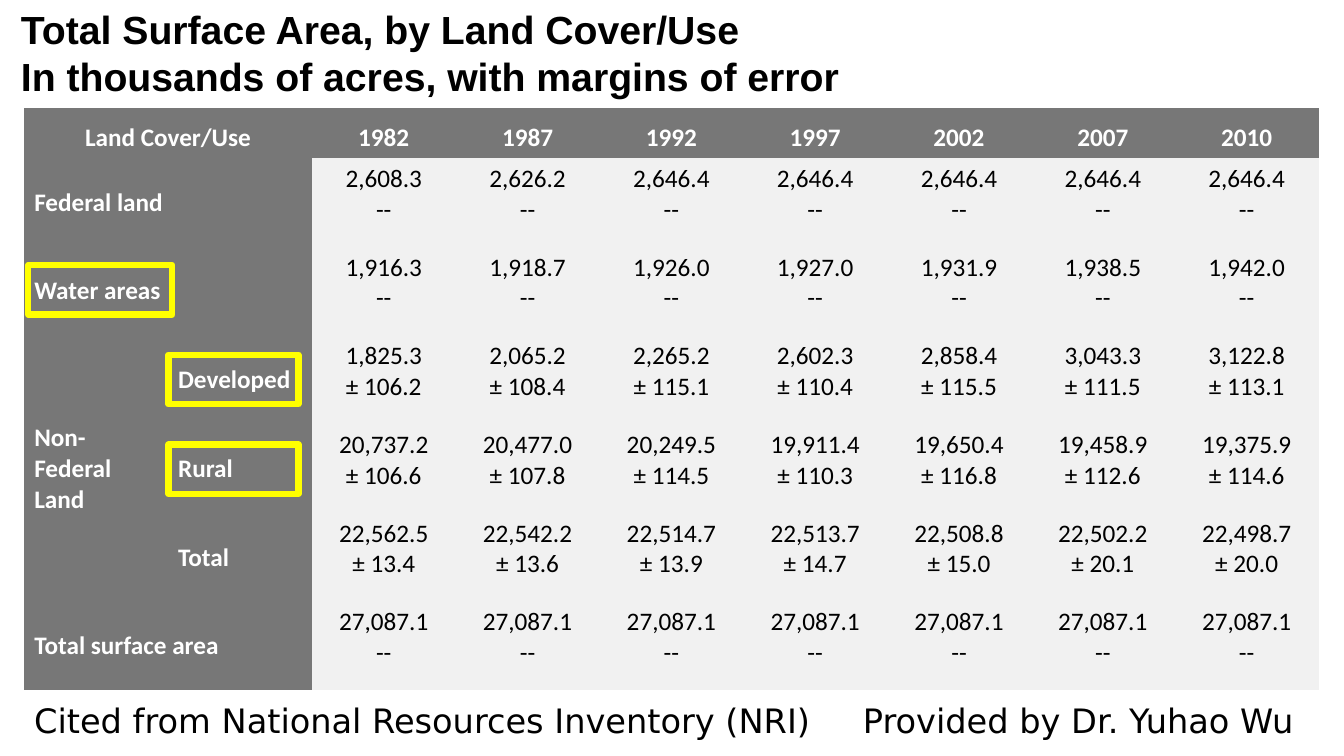
from pptx import Presentation
from pptx.dml.color import RGBColor
from pptx.enum.shapes import MSO_SHAPE as Shape
from pptx.enum.text import MSO_ANCHOR as Anchor, PP_ALIGN as Align
from pptx.oxml.ns import qn
from pptx.util import Inches, Pt
from lxml.etree import SubElement

COLORS = {
    "ink": "000000",
    "header": "777777",
    "header text": "FFFFFF",
    "value": "F1F1F1",
    "highlight": "FFFF00",
}
PLAIN_TABLE_STYLE = "{2D5ABB26-0587-4C30-8999-92F81FD0307C}"

YEARS = ["1982", "1987", "1992", "1997", "2002", "2007", "2010"]
LAND_ROWS = [
    ("Federal land", 0,
     ["2,608.3", "2,626.2"] + ["2,646.4"] * 5, ["--"] * 7),
    ("Water areas", 0,
     ["1,916.3", "1,918.7", "1,926.0", "1,927.0", "1,931.9", "1,938.5", "1,942.0"],
     ["--"] * 7),
    ("Developed", 1,
     ["1,825.3", "2,065.2", "2,265.2", "2,602.3", "2,858.4", "3,043.3", "3,122.8"],
     ["± 106.2", "± 108.4", "± 115.1", "± 110.4", "± 115.5", "± 111.5", "± 113.1"]),
    ("Rural", 1,
     ["20,737.2", "20,477.0", "20,249.5", "19,911.4", "19,650.4", "19,458.9", "19,375.9"],
     ["± 106.6", "± 107.8", "± 114.5", "± 110.3", "± 116.8", "± 112.6", "± 114.6"]),
    ("Total", 1,
     ["22,562.5", "22,542.2", "22,514.7", "22,513.7", "22,508.8", "22,502.2", "22,498.7"],
     ["± 13.4", "± 13.6", "± 13.9", "± 14.7", "± 15.0", "± 20.1", "± 20.0"]),
    ("Total surface area", 0, ["27,087.1"] * 7, ["--"] * 7),
]


def color(name):
    return RGBColor.from_string(COLORS[name])


class SlideBuilder:
    def __init__(self, slide):
        self.slide = slide

    def style(self, paragraph, font, size, ink, bold=False):
        paragraph.font.name = font
        paragraph.font.size = Pt(size)
        paragraph.font.bold = bold
        paragraph.font.color.rgb = color(ink)

    def text(self, left, top, width, height, words, font, size,
             bold=False, anchor=Anchor.TOP, tab=None):
        box = self.slide.shapes.add_textbox(
            Inches(left), Inches(top), Inches(width), Inches(height))
        frame = box.text_frame
        frame.word_wrap = True
        frame.vertical_anchor = anchor
        paragraph = frame.paragraphs[0]
        paragraph.text = words
        paragraph.alignment = Align.LEFT
        if tab:
            tabs = SubElement(paragraph._p.get_or_add_pPr(), qn("a:tabLst"))
            SubElement(tabs, qn("a:tab"), pos=str(Inches(tab)), algn="l")
        self.style(paragraph, font, size, "ink", bold)

    def table(self, left, top, width, row_heights, columns):
        frame = self.slide.shapes.add_table(
            len(row_heights), columns, Inches(left), Inches(top),
            Inches(width), Inches(sum(row_heights)))
        table = frame.table
        table.first_row = table.horz_banding = False
        table._tbl.tblPr.find(qn("a:tableStyleId")).text = PLAIN_TABLE_STYLE
        for row, height in zip(table.rows, row_heights):
            row.height = Inches(height)
        for cell in table.iter_cells():
            cell.fill.solid()
            cell.fill.fore_color.rgb = color("header")
        return table

    def cell(self, cell, words, fill="header", align=Align.LEFT, anchor=Anchor.MIDDLE):
        heading = fill == "header"
        cell.fill.fore_color.rgb = color(fill)
        cell.vertical_anchor = anchor
        paragraph = cell.text_frame.paragraphs[0]
        paragraph.text = words
        paragraph.alignment = align
        self.style(paragraph, "Calibri", 18, "header text" if heading else "ink", heading)

    def highlight(self, left, top, width, height):
        box = self.slide.shapes.add_shape(
            Shape.RECTANGLE, Inches(left), Inches(top), Inches(width), Inches(height))
        box.shadow.inherit = False
        box.fill.background()
        box.line.color.rgb = color("highlight")
        box.line.width = Pt(4.5)


def main():
    deck = Presentation()
    deck.slide_width, deck.slide_height = Inches(13.33), Inches(7.5)
    page = SlideBuilder(deck.slides.add_slide(deck.slide_layouts[6]))

    table = page.table(0.24, 1.07, 12.84, [0.5] + [0.88] * len(LAND_ROWS), len(YEARS) + 2)
    table.cell(0, 0).merge(table.cell(0, 1))
    page.cell(table.cell(0, 0), "Land Cover/Use", align=Align.CENTER, anchor=Anchor.BOTTOM)
    for column, year in enumerate(YEARS, 2):
        page.cell(table.cell(0, column), year, align=Align.CENTER, anchor=Anchor.BOTTOM)

    for row, (label, label_column, areas, margins) in enumerate(LAND_ROWS, 1):
        if label_column == 0:
            table.cell(row, 0).merge(table.cell(row, 1))
        page.cell(table.cell(row, label_column), label)
        for column, (area, margin) in enumerate(zip(areas, margins), 2):
            page.cell(table.cell(row, column), f"{area}\v{margin}",
                      "value", Align.CENTER, Anchor.TOP)
    table.cell(3, 0).merge(table.cell(5, 0))
    page.cell(table.cell(3, 0), "Non-Federal Land")

    page.text(0.24, 6.89, 13, 0.5,
              "Cited from National Resources Inventory (NRI)\tProvided by Dr. Yuhao Wu",
              "DejaVu Sans", 24, tab=8.22)
    page.text(0.11, 0, 8.6, 1.04,
              "Total Surface Area, by Land Cover/Use\vIn thousands of acres, with margins of error",
              "Arial", 28, bold=True, anchor=Anchor.MIDDLE)

    for left, top, width in [(1.67, 3.52, 1.29), (0.28, 2.63, 1.43), (1.67, 4.41, 1.29)]:
        page.highlight(left, top, width, 0.49)

    deck.save("out.pptx")


if __name__ == "__main__":
    main()
